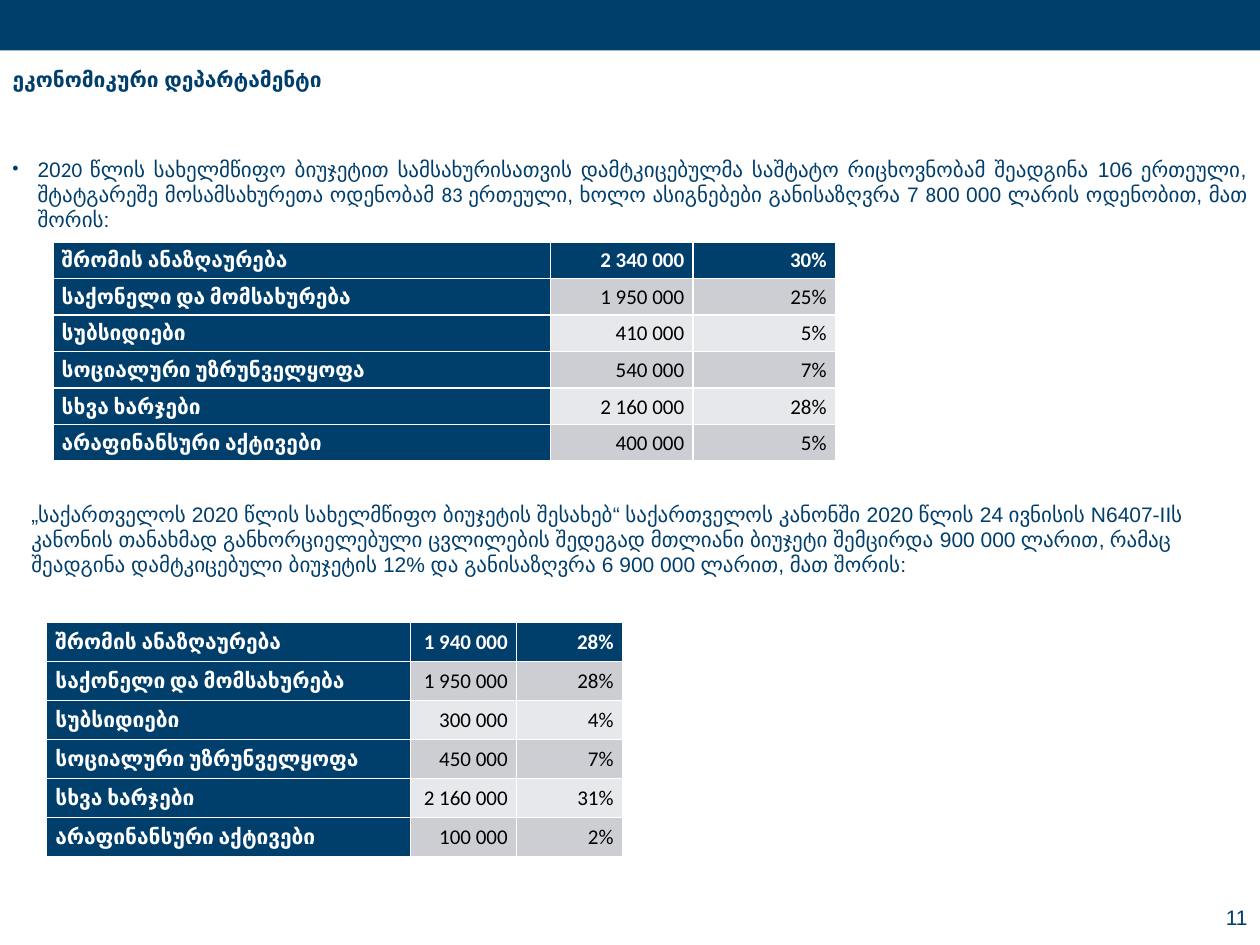
import pptx
import pptx.util
import pptx.dml.color
import pptx.enum.shapes
import pptx.enum.text
import lxml.etree

Inches = pptx.util.Inches
ALIGN = pptx.enum.text.PP_ALIGN
ANCHOR = pptx.enum.text.MSO_ANCHOR

THEME = {
    "navy": "003E6C", "white": "FFFFFF", "black": "000000",
    "bands": ("E7E8EB", "CCCED4"),
    "size": 12, "text": "Arial", "cell": "Calibri",
}

TITLE = "ეკონომიკური დეპარტამენტი"
STAFF = [
    ("20", "text"), ("20 ", "cell"),
    ("წლის სახელმწიფო ბიუჯეტით სამსახურისათვის დამტკიცებულმა საშტატო "
     "რიცხოვნობამ შეადგინა 106 ერთეული, შტატგარეშე მოსამსახურეთა ოდენობამ ", "text"),
    ("83 ", "cell"), ("ერთეული, ხოლო ასიგნებები განისაზღვრა 7 ", "text"),
    ("8", "cell"), ("00 000 ლარის ოდენობით, მათ შორის:", "text"),
]
CHANGE = [(
    "„საქართველოს 2020 წლის სახელმწიფო ბიუჯეტის შესახებ“ საქართველოს კანონში "
    "2020 წლის 24 ივნისის N6407-IIს კანონის თანახმად განხორციელებული ცვლილების "
    "შედეგად მთლიანი ბიუჯეტი შემცირდა 900 000 ლარით, რამაც შეადგინა "
    "დამტკიცებული ბიუჯეტის 12% და განისაზღვრა 6 900 000 ლარით, მათ შორის:", "text")]
PAGE = [("11", "text")]

ITEMS = ["შრომის ანაზღაურება", "საქონელი და მომსახურება", "სუბსიდიები",
         "სოციალური უზრუნველყოფა", "სხვა ხარჯები", "არაფინანსური აქტივები"]
TABLES = [
    {"at": (0.42, 1.92), "cols": (3.95, 1.13, 1.13), "row": 0.29, "align": ALIGN.LEFT,
     "sums": ["2 340 000", "1 950 000", "410 000", "540 000", "2 160 000", "400 000"],
     "parts": ["30%", "25%", "5%", "7%", "28%", "5%"]},
    {"at": (0.37, 4.94), "cols": (2.89, 0.84, 0.84), "row": 0.31, "align": ALIGN.JUSTIFY,
     "sums": ["1 940 000", "1 950 000", "300 000", "450 000", "2 160 000", "100 000"],
     "parts": ["28%", "28%", "4%", "7%", "31%", "2%"]},
]


def color(hex):
    return pptx.dml.color.RGBColor.from_string(hex)


def style(para, face="text", ink="navy", bold=False, align=ALIGN.LEFT):
    para.alignment = align
    para.font.name = THEME[face]
    para.font.size = pptx.util.Pt(THEME["size"])
    para.font.bold = bold
    para.font.color.rgb = color(THEME[ink])


def add_text(slide, box, runs, align=ALIGN.LEFT, anchor=ANCHOR.TOP):
    frame = slide.shapes.add_textbox(*map(Inches, box)).text_frame
    frame.word_wrap = True
    frame.vertical_anchor = anchor
    para = frame.paragraphs[0]
    for text, face in runs:
        run = para.add_run()
        run.text = text
        if face != "text":
            run.font.name = THEME[face]
    return para


def add_bullet(para):
    props = para._p.get_or_add_pPr()
    props.set("marL", str(Inches(0.2)))
    props.set("indent", str(-Inches(0.2)))
    space = "http://schemas.openxmlformats.org/drawingml/2006/main"
    tint = lxml.etree.SubElement(props, f"{{{space}}}buClr")
    lxml.etree.SubElement(tint, f"{{{space}}}srgbClr", val=THEME["navy"])
    lxml.etree.SubElement(props, f"{{{space}}}buSzPct", val="85000")
    lxml.etree.SubElement(props, f"{{{space}}}buFont", typeface=THEME["text"])
    lxml.etree.SubElement(props, f"{{{space}}}buChar", char="•")


def add_budget(slide, data):
    rows = list(zip(ITEMS, data["sums"], data["parts"]))
    size = (sum(data["cols"]), data["row"] * len(rows))
    table = slide.shapes.add_table(
        len(rows), len(data["cols"]), *map(Inches, data["at"] + size)).table
    table.first_col = True
    for col, width in zip(table.columns, data["cols"]):
        col.width = Inches(width)
    for r, row in enumerate(rows):
        table.rows[r].height = Inches(data["row"])
        for c, text in enumerate(row):
            cell = table.cell(r, c)
            head = r == 0 or c == 0
            cell.text = text
            cell.vertical_anchor = ANCHOR.MIDDLE
            cell.margin_left = cell.margin_right = Inches(0.07)
            cell.margin_top = cell.margin_bottom = 0
            cell.fill.solid()
            cell.fill.fore_color.rgb = color(THEME["navy"] if head else THEME["bands"][r % 2])
            para = cell.text_frame.paragraphs[0]
            para.line_spacing = 1.05
            style(para, "cell", "white" if head else "black", head,
                  ALIGN.RIGHT if c else data["align"])


def main():
    deck = pptx.Presentation()
    deck.slide_width, deck.slide_height = Inches(10), Inches(7.5)
    slide = deck.slides.add_slide(deck.slide_layouts[5])

    band = slide.shapes.add_shape(
        pptx.enum.shapes.MSO_SHAPE.RECTANGLE, 0, 0, Inches(10), Inches(0.4))
    band.shadow.inherit = False
    band.fill.solid()
    band.fill.fore_color.rgb = color(THEME["navy"])
    band.line.fill.background()

    title = slide.shapes.title
    title.left, title.top, title.width, title.height = map(Inches, (0, 0.48, 10, 0.3))
    title.text_frame.text = TITLE
    title.text_frame.vertical_anchor = ANCHOR.TOP
    style(title.text_frame.paragraphs[0], bold=True)

    staff = add_text(slide, (0, 1.19, 10, 0.7), STAFF)
    add_bullet(staff)
    style(staff, align=ALIGN.JUSTIFY)
    style(add_text(slide, (0.15, 3.93, 9.65, 0.71), CHANGE))
    page = add_text(slide, (8.83, 7.1, 1.17, 0.36), PAGE, anchor=ANCHOR.MIDDLE)
    style(page, align=ALIGN.RIGHT)

    for data in TABLES:
        add_budget(slide, data)
    deck.save("out.pptx")


if __name__ == "__main__":
    main()
